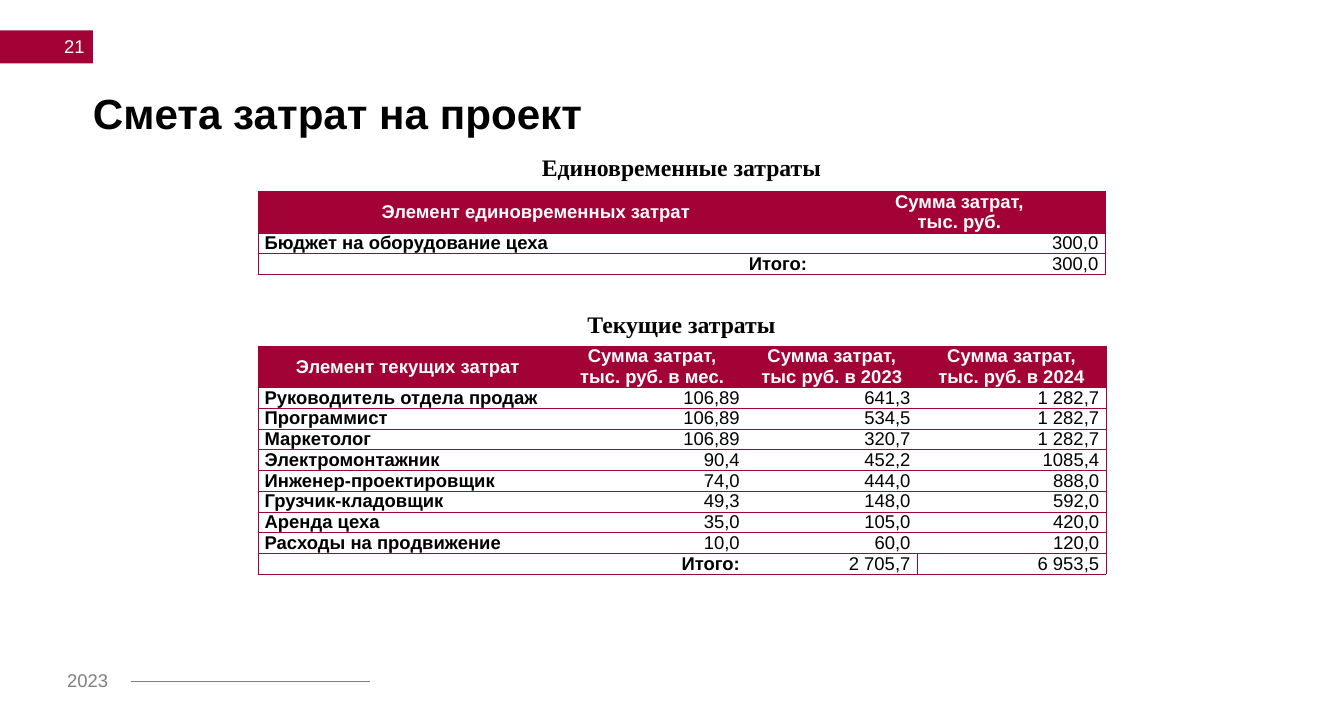
from dataclasses import dataclass

from lxml.etree import SubElement
from pptx import Presentation
from pptx.dml.color import RGBColor
from pptx.enum.shapes import MSO_CONNECTOR, MSO_SHAPE
from pptx.enum.text import MSO_ANCHOR, PP_ALIGN
from pptx.oxml.ns import qn
from pptx.util import Inches, Pt

CRIMSON = RGBColor(0xA3, 0x02, 0x36)
GRAY = RGBColor(0x80, 0x80, 0x80)
WHITE = RGBColor(0xFF, 0xFF, 0xFF)
BLACK = RGBColor(0, 0, 0)

TABLE_LEFT = 2.72
TABLE_WIDTH = 8.93
ROW_HEIGHT = 0.18  # rows grow to fit their text
CELL_MARGIN = 0.07
BORDER_WIDTH = Pt(0.5)


@dataclass
class Label:
    text: str
    left: float
    top: float
    width: float
    height: float
    size: int
    color: RGBColor = BLACK
    bold: bool = False
    font: str = "Arial"
    align: PP_ALIGN = PP_ALIGN.LEFT
    anchor: MSO_ANCHOR = MSO_ANCHOR.TOP
    margin_x: float = 0.1
    margin_y: float = 0.05
    line_spacing: float = 1.0


@dataclass
class CostTable:
    """Costs with a header row first and a total row last."""
    top: float
    height: float
    columns: list[float]
    rows: list[list[str]]


def heading(text: str, top: float) -> Label:
    return Label(text, 3.75, top, 6.87, 0.4, 18, bold=True,
                 font="Times New Roman", align=PP_ALIGN.CENTER)


LABELS = [
    Label("2023", 0.61, 7.01, 0.67, 0.34, 14, GRAY),
    Label("21", 0.18, 0.29, 0.81, 0.4, 14, WHITE,
          align=PP_ALIGN.RIGHT, anchor=MSO_ANCHOR.MIDDLE),
    Label("Смета затрат на проект", 0.98, 0.98, 10.47, 0.78, 32, bold=True,
          margin_x=0, margin_y=0, line_spacing=0.9),
    heading("Единовременные затраты", 1.56),
    heading("Текущие затраты", 3.22),
]

ONE_TIME_COSTS = CostTable(2.02, 0.93, [5.86, 3.07], [
    ["Элемент единовременных затрат", "Сумма затрат,\nтыс. руб."],
    ["Бюджет на оборудование цеха", "300,0"],
    ["Итого:", "300,0"],
])

CURRENT_COSTS = CostTable(3.65, 2.57, [3.16, 1.99, 1.8, 1.99], [
    ["Элемент текущих затрат", "Сумма затрат,\nтыс. руб. в мес.",
     "Сумма затрат,\nтыс руб. в 2023", "Сумма затрат,\nтыс. руб. в 2024"],
    ["Руководитель отдела продаж", "106,89", "641,3", "1 282,7"],
    ["Программист", "106,89", "534,5", "1 282,7"],
    ["Маркетолог", "106,89", "320,7", "1 282,7"],
    ["Электромонтажник", "90,4", "452,2", "1085,4"],
    ["Инженер-проектировщик", "74,0", "444,0", "888,0"],
    ["Грузчик-кладовщик", "49,3", "148,0", "592,0"],
    ["Аренда цеха", "35,0", "105,0", "420,0"],
    ["Расходы на продвижение", "10,0", "60,0", "120,0"],
    ["Итого:", "", "2 705,7", "6 953,5"],
])


def add_run(p, text: str, size: int, color: RGBColor, bold: bool,
            font: str = "Arial") -> None:
    r = p.add_run()
    r.text = text
    r.font.name = font
    r.font.size = Pt(size)
    r.font.bold = bold
    r.font.color.rgb = color


def add_label(s, label: Label) -> None:
    box = s.shapes.add_textbox(Inches(label.left), Inches(label.top),
                               Inches(label.width), Inches(label.height))
    tf = box.text_frame
    tf.word_wrap = True
    tf.vertical_anchor = label.anchor
    tf.margin_left = tf.margin_right = Inches(label.margin_x)
    tf.margin_top = tf.margin_bottom = Inches(label.margin_y)
    p = tf.paragraphs[0]
    p.alignment = label.align
    p.line_spacing = label.line_spacing
    add_run(p, label.text, label.size, label.color, label.bold, label.font)


def set_borders(cell, sides: str) -> None:
    """Draw the sides named by letters of LRTB and hide the others."""
    props = cell._tc.get_or_add_tcPr()
    for side in "LRTB":
        line = SubElement(props, qn(f"a:ln{side}"), w=str(BORDER_WIDTH))
        if side in sides:
            fill = SubElement(line, qn("a:solidFill"))
            SubElement(fill, qn("a:srgbClr"), val=str(CRIMSON))
        else:
            SubElement(line, qn("a:noFill"))


def fill_cell(cell, text: str, align: PP_ALIGN, is_header: bool,
              bold: bool) -> None:
    cell.fill.solid()
    cell.fill.fore_color.rgb = CRIMSON if is_header else WHITE
    cell.vertical_anchor = MSO_ANCHOR.MIDDLE
    cell.margin_left = cell.margin_right = Inches(CELL_MARGIN)
    cell.margin_top = cell.margin_bottom = 0
    tf = cell.text_frame
    for i, line in enumerate(text.split("\n")):
        p = tf.add_paragraph() if i else tf.paragraphs[0]
        p.alignment = align
        add_run(p, line, 14, WHITE if is_header else BLACK, bold)


def add_cost_table(s, costs: CostTable) -> None:
    last_row, last_col = len(costs.rows) - 1, len(costs.columns) - 1
    frame = s.shapes.add_table(
        last_row + 1, last_col + 1, Inches(TABLE_LEFT), Inches(costs.top),
        Inches(TABLE_WIDTH), Inches(costs.height))
    table = frame.table
    for column, width in zip(table.columns, costs.columns):
        column.width = Inches(width)
    for row in table.rows:
        row.height = Inches(ROW_HEIGHT)
    frame.height = Inches(costs.height)

    has_divider = last_col > 1
    if has_divider:
        table.cell(last_row, 0).merge(table.cell(last_row, 1))
    for i, values in enumerate(costs.rows):
        for j, text in enumerate(values):
            cell = table.cell(i, j)
            divided = has_divider and i == last_row
            sides = "TB"
            if j == 0 or divided and j == last_col:
                sides += "L"
            if j == last_col or divided and j == last_col - 1:
                sides += "R"
            set_borders(cell, sides)
            if cell.is_spanned:
                continue
            if i == 0:
                align = PP_ALIGN.CENTER
            elif j == 0 and i < last_row:
                align = PP_ALIGN.LEFT
            else:
                align = PP_ALIGN.RIGHT
            fill_cell(cell, text, align, i == 0, i == 0 or j == 0)


def add_page_marker(s) -> None:
    sp = s.shapes.add_shape(MSO_SHAPE.RECTANGLE, 0, Inches(0.32),
                            Inches(0.98), Inches(0.35))
    sp.shadow.inherit = False
    sp.fill.solid()
    sp.fill.fore_color.rgb = CRIMSON
    sp.line.fill.background()


def add_footer_line(s) -> None:
    line = s.shapes.add_connector(MSO_CONNECTOR.STRAIGHT, Inches(1.38),
                                  Inches(7.19), Inches(3.9), Inches(7.19))
    line.line.color.rgb = GRAY
    line.line.width = Pt(1.5)
    SubElement(line._element.spPr, qn("a:effectLst"))


def main() -> None:
    prs = Presentation()
    prs.slide_width, prs.slide_height = Inches(14.17), Inches(7.48)
    s = prs.slides.add_slide(prs.slide_layouts[6])
    add_page_marker(s)
    add_footer_line(s)
    for costs in (ONE_TIME_COSTS, CURRENT_COSTS):
        add_cost_table(s, costs)
    for label in LABELS:
        add_label(s, label)
    prs.save("out.pptx")


if __name__ == "__main__":
    main()
